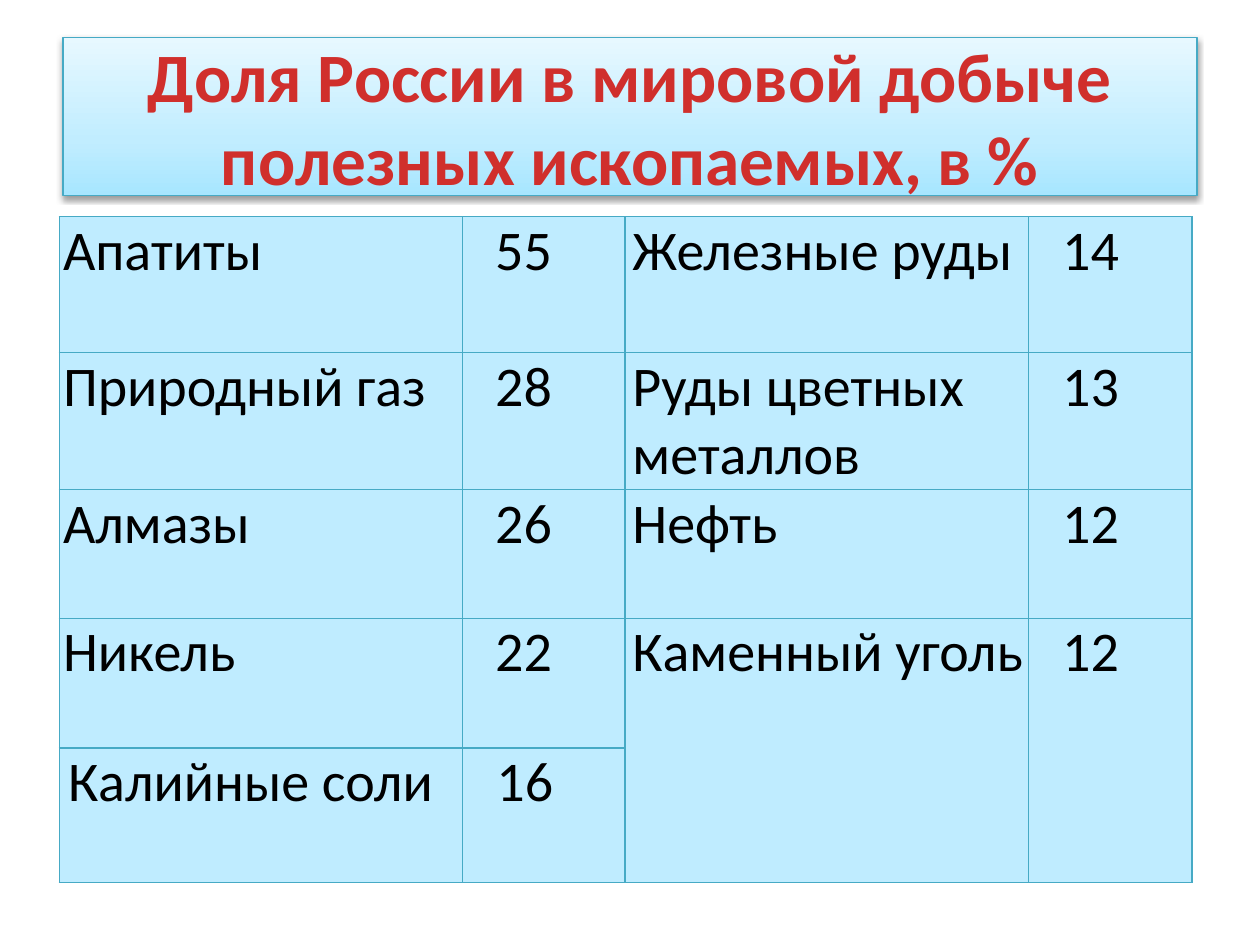
from lxml import etree
from pptx import Presentation
from pptx.dml.color import RGBColor
from pptx.enum import text
from pptx.oxml import parse_xml
from pptx.oxml.ns import nsdecls
from pptx.util import Inches, Pt

# Content: mineral and share, for the left and right halves of the table
TITLE = "Доля России в мировой добыче полезных ископаемых, в %"
ROWS = [
    ("Апатиты", "55", "Железные руды", "14"),
    ("Природный газ", "28", "Руды цветных металлов", "13"),
    ("Алмазы", "26", "Нефть", "12"),
    ("Никель", "22", "Каменный уголь", "12"),
    ("Калийные соли", "16", None, None),  # right half joins the row above
]
COL_WIDTHS = [3.2, 1.29, 3.2, 1.3]
ROW_HEIGHTS = [1.08, 1.08, 1.02, 1.03, 1.07]
COL_INDENTS = [0, 0.23, 0.03, 0.24]
LAST_ROW_INDENTS = [0.04, 0.24]

FONT = "Calibri"
RED = RGBColor(0xD0, 0x2F, 0x2C)
BLACK = RGBColor(0, 0, 0)
TEAL = RGBColor(0x46, 0xAA, 0xC5)
CELL_BLUE = RGBColor(0xBF, 0xEC, 0xFF)
TITLE_STOPS = [(0, "A7E6FF"), (35, "C1EDFF"), (100, "E7F8FF")]


def style_run(p, size, color, bold=False):
    font = p.runs[0].font
    font.name, font.size, font.bold = FONT, Pt(size), bold
    font.color.rgb = color


def add_gradient_and_shadow(sp):
    stops = "".join(
        f'<a:gs pos="{pos * 1000}"><a:srgbClr val="{color}"/></a:gs>'
        for pos, color in TITLE_STOPS)
    props = sp.fill._xPr
    solid = props.find("{*}solidFill")
    props.replace(solid, parse_xml(
        f'<a:gradFill {nsdecls("a")} rotWithShape="1"><a:gsLst>{stops}</a:gsLst>'
        '<a:lin ang="16200000" scaled="0"/></a:gradFill>'))
    props.append(parse_xml(
        f'<a:effectLst {nsdecls("a")}><a:outerShdw blurRad="{Pt(3.1)}" '
        f'dist="{Pt(1.6)}" dir="5400000" rotWithShape="0"><a:srgbClr val="000000">'
        '<a:alpha val="38000"/></a:srgbClr></a:outerShdw></a:effectLst>'))


def add_borders(cell):
    props = cell._tc.get_or_add_tcPr()
    for i, side in enumerate("LRTB"):
        props.insert(i, parse_xml(
            f'<a:ln{side} {nsdecls("a")} w="{Pt(0.75)}"><a:solidFill>'
            f'<a:srgbClr val="{TEAL}"/></a:solidFill></a:ln{side}>'))


prs = Presentation()
prs.slide_width, prs.slide_height = Inches(10), Inches(7.5)
s = prs.slides.add_slide(prs.slide_layouts[5])

# Title panel
sp = s.shapes.title
sp.left, sp.top, sp.width, sp.height = map(Inches, (0.5, 0.3, 9, 1.25))
sp.fill.solid()
sp.line.color.rgb = TEAL
sp.line.width = Pt(0.75)
add_gradient_and_shadow(sp)
tf = sp.text_frame
tf.text = TITLE
tf.word_wrap = True
tf.auto_size = text.MSO_AUTO_SIZE.NONE
tf.vertical_anchor = text.MSO_ANCHOR.MIDDLE
tf.paragraphs[0].alignment = text.PP_ALIGN.CENTER
style_run(tf.paragraphs[0], 39.6, RED, bold=True)

# Table grid
table = s.shapes.add_table(
    len(ROWS), len(COL_WIDTHS), Inches(0.47), Inches(1.72),
    Inches(sum(COL_WIDTHS)), Inches(sum(ROW_HEIGHTS))).table
table.first_row = table.horz_banding = False
for col, width in zip(table.columns, COL_WIDTHS):
    col.width = Inches(width)
for row, height in zip(table.rows, ROW_HEIGHTS):
    row.height = Inches(height)

# Table cells
for r, values in enumerate(ROWS):
    indents = LAST_ROW_INDENTS + COL_INDENTS[2:] if r == len(ROWS) - 1 else COL_INDENTS
    for c, (value, indent) in enumerate(zip(values, indents)):
        cell = table.cell(r, c)
        cell.fill.solid()
        cell.fill.fore_color.rgb = CELL_BLUE
        add_borders(cell)
        cell.margin_left = cell.margin_right = Inches(0.03)
        cell.margin_top = cell.margin_bottom = 0
        if value is None:
            table.cell(r - 1, c).merge(cell)
            continue
        cell.text_frame.text = value
        p = cell.text_frame.paragraphs[0]
        p._p.get_or_add_pPr().set("marL", str(Inches(indent)))
        style_run(p, 32, BLACK)

prs.save("out.pptx")
